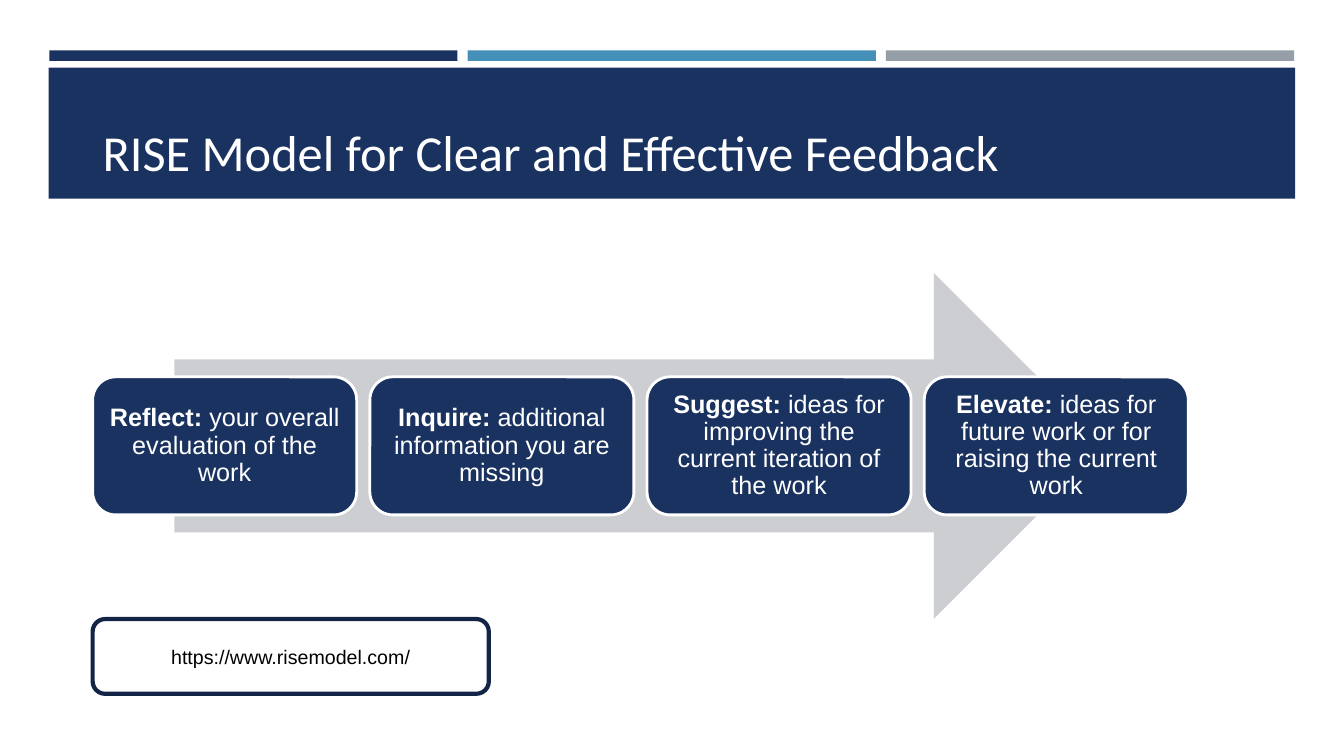
"""Build the RISE feedback model slide."""
from dataclasses import dataclass

from pptx import Presentation
from pptx import util as u
from pptx.dml import color
from pptx.enum import shapes, text


@dataclass(frozen=True)
class Theme:
    """Colours, fonts and type sizes of the slide."""
    navy: str = "1A3260"
    blue: str = "4590B8"
    grey: str = "969FA7"
    pale: str = "CDCED2"
    outline: str = "132547"
    white: str = "FFFFFF"
    black: str = "000000"
    heading_font: str = "Calibri"
    body_font: str = "Arial"
    title_size: float = 36
    step_size: float = 18
    address_size: float = 14


THEME = Theme()
KIND = shapes.MSO_SHAPE
STEPS = [
    ("Reflect:", " your overall evaluation of the work"),
    ("Inquire: ", "additional information you are missing"),
    ("Suggest: ", "ideas for improving the current iteration of the work"),
    ("Elevate: ", "ideas for future work or for raising the current work"),
]


def rgb(value):
    """Turn a hex string into a colour."""
    return color.RGBColor.from_string(value)


def add_block(slide, kind, box, fill=None, line=None, width=0):
    """Add a flat shape with optional fill and outline."""
    block = slide.shapes.add_shape(kind, *(u.Pt(length) for length in box))
    block.shadow.inherit = False
    if fill:
        block.fill.solid()
        block.fill.fore_color.rgb = rgb(fill)
    else:
        block.fill.background()
    if line:
        block.line.color.rgb = rgb(line)
        block.line.width = u.Pt(width)
    else:
        block.line.fill.background()
    return block


def style_run(run, font, size, ink, bold=False):
    """Set the typeface, size, colour and weight of a run."""
    run.font.name = font
    run.font.size = u.Pt(size)
    run.font.color.rgb = rgb(ink)
    run.font.bold = bold


def add_header(slide):
    """Add the three accent bars, the title band and the title."""
    for column, accent in enumerate((THEME.navy, THEME.blue, THEME.grey)):
        add_block(slide, KIND.RECTANGLE, (35.2 + 298.8 * column, 36, 291.6, 7.5), accent)
    add_block(slide, KIND.RECTANGLE, (34.8, 48.4, 890.4, 93.6), THEME.navy)
    title = slide.shapes.add_textbox(u.Pt(66.2), u.Pt(28.8), u.Pt(879.8), u.Pt(104.4))
    frame = title.text_frame
    frame.word_wrap = True
    frame.vertical_anchor = text.MSO_ANCHOR.BOTTOM
    frame.text = "RISE Model for Clear and Effective Feedback"
    style_run(frame.paragraphs[0].runs[0], THEME.heading_font, THEME.title_size, THEME.white)


def add_step(slide, position, name, description):
    """Add one rounded step card with a bold name."""
    card = add_block(slide, KIND.ROUNDED_RECTANGLE, (66.2 + 198 * position, 269.2, 188.6, 98.6),
                     THEME.navy, THEME.white, 2)
    frame = card.text_frame
    frame.word_wrap = True
    frame.vertical_anchor = text.MSO_ANCHOR.MIDDLE
    frame.margin_left = frame.margin_right = u.Pt(5)
    frame.margin_top = frame.margin_bottom = u.Pt(5)
    sentence = frame.paragraphs[0]
    sentence.text = name
    sentence.add_run().text = description
    sentence.alignment = text.PP_ALIGN.CENTER
    sentence.line_spacing = 0.9
    for run, bold in zip(sentence.runs, (True, False)):
        style_run(run, THEME.body_font, THEME.step_size, THEME.white, bold)


def add_address(slide):
    """Add the outlined box with the web address."""
    address = add_block(slide, KIND.ROUNDED_RECTANGLE, (66.2, 442.2, 283, 53.4),
                        line=THEME.outline, width=3)
    frame = address.text_frame
    frame.word_wrap = True
    frame.vertical_anchor = text.MSO_ANCHOR.MIDDLE
    frame.text = "https://www.risemodel.com/"
    frame.paragraphs[0].alignment = text.PP_ALIGN.CENTER
    style_run(frame.paragraphs[0].runs[0], THEME.body_font, THEME.address_size, THEME.black)


def main():
    """Compose the slide and save it."""
    deck = Presentation()
    deck.slide_width, deck.slide_height = u.Pt(960), u.Pt(540)
    slide = deck.slides.add_slide(deck.slide_layouts[6])
    add_header(slide)
    add_block(slide, KIND.RIGHT_ARROW, (124.6, 195, 666, 247), THEME.pale)
    for position, (name, description) in enumerate(STEPS):
        add_step(slide, position, name, description)
    add_address(slide)
    deck.save("out.pptx")


if __name__ == "__main__":
    main()
